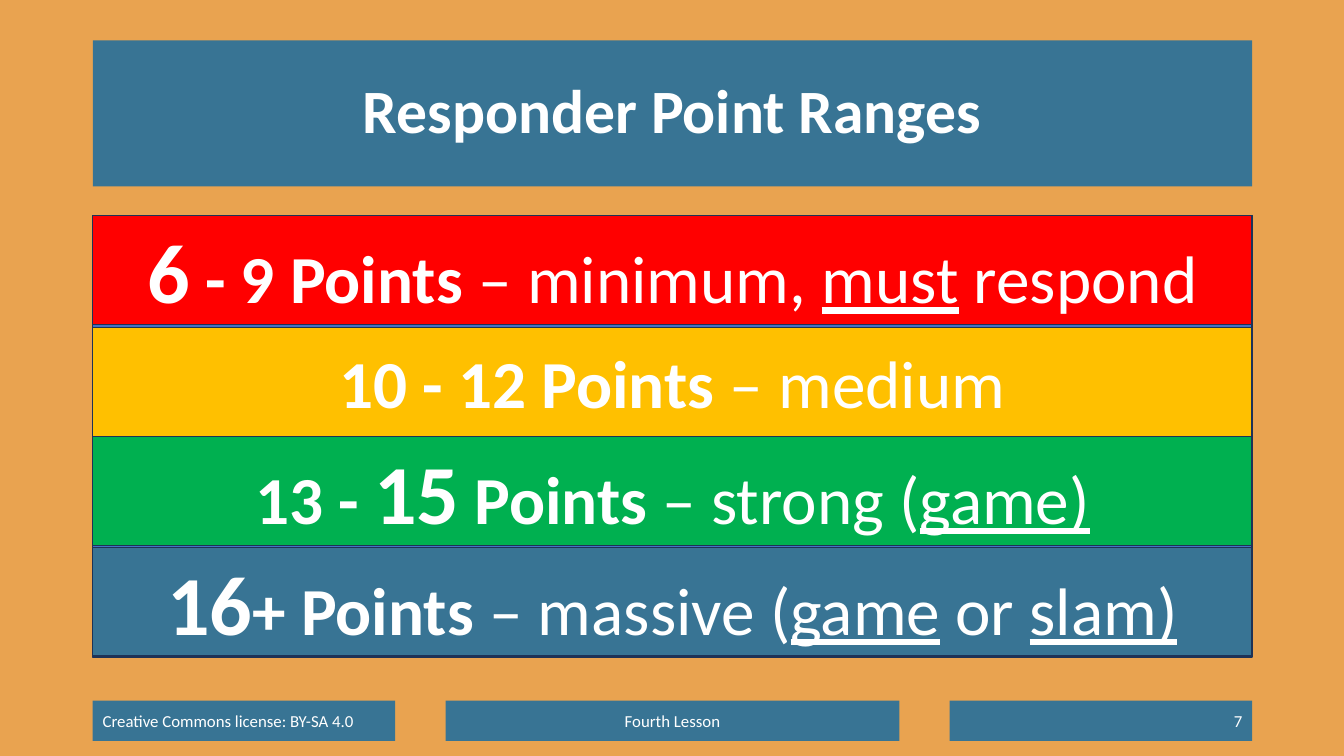
from pptx import Presentation
from pptx.dml.color import RGBColor
from pptx.enum.shapes import MSO_SHAPE
from pptx.enum.text import MSO_ANCHOR, MSO_AUTO_SIZE, PP_ALIGN
from pptx.util import Pt

SCALE = 9144  # EMU per px, 100 px to the inch
BLUE, EDGE, WHITE = "387494", "1E3256", "FFFFFF"
LEFT, WIDTH = 92, 1150


def px(n):
    return n * SCALE


def tint(code):
    return RGBColor.from_string(code)


class Deck:
    font = "Calibri"

    def __init__(self, wide, high, back):
        self.prs = Presentation()
        self.prs.slide_width, self.prs.slide_height = px(wide), px(high)
        self.slide = self.prs.slides.add_slide(self.prs.slide_layouts[5])
        fill = self.slide.background.fill
        fill.solid()
        fill.fore_color.rgb = tint(back)

    def paint(self, shape, fill, edge=None):
        shape.fill.solid()
        shape.fill.fore_color.rgb = tint(fill)
        if edge:
            shape.line.color.rgb = tint(edge)
            shape.line.width = Pt(1)
        else:
            shape.line.fill.background()

    def label(self, shape, runs, align):
        """Each run is (text, size, marks); marks hold b for bold, u for underline."""
        frame = shape.text_frame
        frame.word_wrap = True
        frame.auto_size = MSO_AUTO_SIZE.NONE
        frame.vertical_anchor = MSO_ANCHOR.MIDDLE
        para = frame.paragraphs[0]
        para.alignment = align
        for text, size, marks in runs:
            run = para.add_run()
            run.text = text
            font = run.font
            font.name, font.size = self.font, Pt(size)
            font.bold, font.underline = "b" in marks, "u" in marks
            font.color.rgb = tint(WHITE)
        return para

    def title(self, text, x, y, w, h):
        shape = self.slide.shapes.title
        shape.left, shape.top, shape.width, shape.height = map(px, (x, y, w, h))
        self.paint(shape, BLUE)
        para = self.label(shape, [(text, 44, "b")], PP_ALIGN.CENTER)
        para.line_spacing = 0.9

    def box(self, x, y, w, h, fill, edge=None, runs=(), align=PP_ALIGN.CENTER):
        shape = self.slide.shapes.add_shape(
            MSO_SHAPE.RECTANGLE, *map(px, (x, y, w, h)))
        shape.shadow.inherit = False
        self.paint(shape, fill, edge)
        if runs:
            self.label(shape, runs, align)

    def save(self):
        self.prs.save("out.pptx")


BANDS = [
    (214, "FF0000", [("6", 60, "b"), (" - 9 Points ", 48, "b"),
                     ("– minimum, ", 48, ""), ("must", 48, "u"),
                     (" respond", 48, "")]),
    (325, "FFC000", [("10 - 12 Points ", 48, "b"), ("– medium", 48, "")]),
    (433, "00B050", [("13 - ", 48, "b"), ("15", 60, "b"), (" Points ", 48, "b"),
                     ("– strong (", 48, ""), ("game)", 48, "u")]),
    (543, BLUE, [("16", 60, "b"), ("+ Points ", 48, "b"),
                 ("– massive (", 48, ""), ("game", 48, "u"),
                 (" or ", 48, ""), ("slam)", 48, "u")]),
]

FOOT = [
    (92, 300, "Creative Commons license: BY-SA 4.0", PP_ALIGN.LEFT),
    (442, 450, "Fourth Lesson", PP_ALIGN.CENTER),
    (942, 300, "7", PP_ALIGN.RIGHT),
]


def main():
    deck = Deck(1333, 750, "E9A350")
    # Title bar
    deck.title("Responder Point Ranges", LEFT, 40, WIDTH, 145)
    # Footer bars
    for x, w, text, align in FOOT:
        deck.box(x, 695, w, 40, BLUE, runs=[(text, 12, "")], align=align)
    # Panel behind the bands
    deck.box(LEFT, 214, WIDTH, 438, "4472C4", EDGE)
    # Point range bands
    for top, fill, runs in BANDS:
        deck.box(LEFT, top, WIDTH, 108, fill, EDGE, runs)
    deck.save()


if __name__ == "__main__":
    main()
